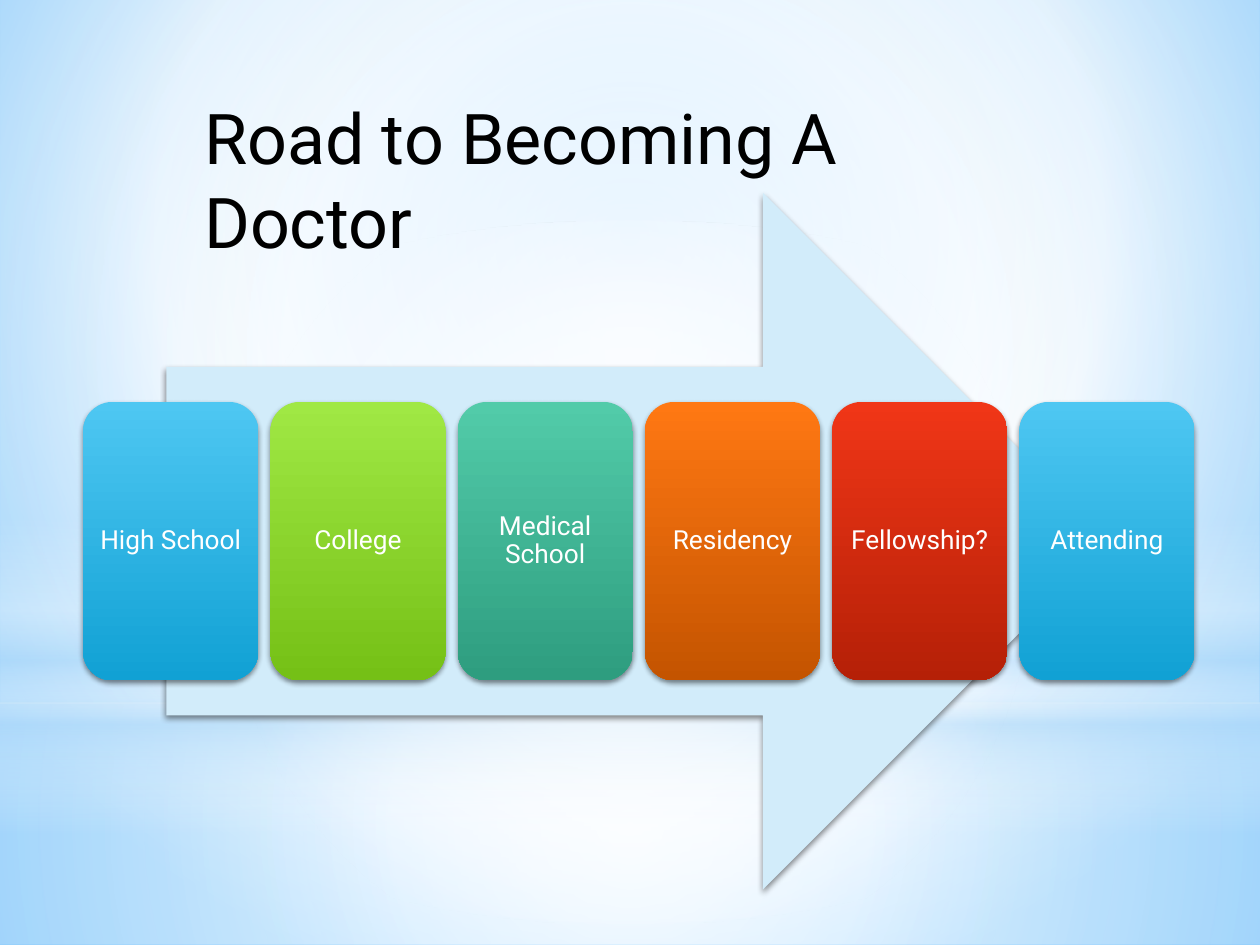
from dataclasses import dataclass

from pptx import Presentation
from pptx.dml.color import RGBColor
from pptx.enum.shapes import MSO_SHAPE
from pptx.enum.text import MSO_ANCHOR, MSO_AUTO_SIZE, PP_ALIGN
from pptx.oxml import parse_xml
from pptx.oxml.ns import nsdecls, qn
from pptx.util import Inches, Pt

RECT, OVAL = MSO_SHAPE.RECTANGLE, MSO_SHAPE.OVAL
ARROW, CARD = MSO_SHAPE.RIGHT_ARROW, MSO_SHAPE.ROUNDED_RECTANGLE


@dataclass(frozen=True)
class Theme:
    font: str = "Roboto"
    title_size: int = 40
    card_size: int = 15
    ink: str = "000000"
    white: str = "FFFFFF"
    mist: str = "B4DCFA"
    sky: str = "9ED5FF"
    edge: str = "5BB9FF"
    arrow: str = "D2ECFA"
    blue: tuple = ("4EC7F2", "11A1D4")
    lime: tuple = ("A0E844", "75C016")
    teal: tuple = ("52CBA9", "2E9D7F")
    orange: tuple = ("FF7813", "C45400")
    red: tuple = ("F03617", "B52007")


theme = Theme()
CENTER = (50, 50, 50, 50)


def set_grad(owner, fill, stops, focus=None):
    """Fill with (position, colour, opacity) stops: round a focus, else downward."""
    fill.gradient()
    old = owner.find(".//" + qn("a:gradFill"))
    marks = "".join(
        f'<a:gs pos="{pos * 1000}"><a:srgbClr val="{color}">'
        f'<a:alpha val="{alpha * 1000}"/></a:srgbClr></a:gs>'
        for pos, color, alpha in stops)
    if focus:
        sides = " ".join(f'{side}="{val * 1000}"' for side, val in zip("ltrb", focus))
        way = f'<a:path path="circle"><a:fillToRect {sides}/></a:path>'
    else:
        way = '<a:lin ang="5400000" scaled="0"/>'
    old.getparent().replace(old, parse_xml(
        f'<a:gradFill {nsdecls("a")} rotWithShape="1">'
        f'<a:gsLst>{marks}</a:gsLst>{way}</a:gradFill>'))


def add_shape(kind, left, top, width, height, shadow=False):
    shape = slide.shapes.add_shape(
        kind, Inches(left), Inches(top), Inches(width), Inches(height))
    shape.line.fill.background()
    shape.shadow.inherit = False
    if shadow:
        shape.element.spPr.find(qn("a:effectLst")).append(parse_xml(
            f'<a:outerShdw {nsdecls("a")} blurRad="{Pt(3.1)}" dist="{Pt(1.8)}" '
            'dir="5400000" rotWithShape="0"><a:srgbClr val="000000">'
            '<a:alpha val="45000"/></a:srgbClr></a:outerShdw>'))
    return shape


deck = Presentation()
deck.slide_width, deck.slide_height = Inches(10), Inches(7.5)
slide = deck.slides.add_slide(deck.slide_layouts[5])

# Background glow
white, mist = theme.white, theme.mist
set_grad(slide.element, slide.background.fill,
         [(0, theme.sky, 100), (60, white, 100), (100, theme.edge, 100)],
         (20, 10, 20, 60))
glows = [
    (RECT, 5.58, 1.92, [(0, white, 91), (37, white, 76), (100, mist, 79)], CENTER),
    (RECT, 0, 5.58, [(0, white, 89), (48, white, 62), (100, mist, 79)], CENTER),
    (RECT, 4.12, 2.5, [(0, white, 0), (29, white, 30), (45, mist, 40),
                       (55, white, 26), (65, mist, 60), (100, white, 0)], None),
    (OVAL, 1.75, 5.58, [(0, white, 100), (56, white, 0)], CENTER),
]
for kind, top, height, stops, focus in glows:
    glow = add_shape(kind, 0, top, 10, height)
    set_grad(glow.element, glow.fill, stops, focus)

# Title, raised above the glow
title = slide.shapes.title
slide.shapes.element.append(title.element)
title.left, title.top = Inches(1.52), Inches(0.7)
title.width, title.height = Inches(6.98), Inches(0.77)
frame = title.text_frame
frame.text = "Road to Becoming A Doctor"
frame.word_wrap = True
frame.auto_size = MSO_AUTO_SIZE.NONE
frame.vertical_anchor = MSO_ANCHOR.TOP
para = frame.paragraphs[0]
para.alignment = PP_ALIGN.LEFT
para.font.name, para.font.size = theme.font, Pt(theme.title_size)
para.font.color.rgb = RGBColor.from_string(theme.ink)

# Arrow and career steps
arrow = add_shape(ARROW, 1.32, 1.53, 7.5, 5.53, shadow=True)
arrow.fill.solid()
arrow.fill.fore_color.rgb = RGBColor.from_string(theme.arrow)

steps = [
    ("High School", theme.blue),
    ("College", theme.lime),
    ("Medical School", theme.teal),
    ("Residency", theme.orange),
    ("Fellowship?", theme.red),
    ("Attending", theme.blue),
]
first, last = 0.66, 8.09
pitch = (last - first) / (len(steps) - 1)
for i, (label, (light, dark)) in enumerate(steps):
    card = add_shape(CARD, first + i * pitch, 3.19, 1.39, 2.21, shadow=True)
    set_grad(card.element, card.fill, [(0, light, 100), (100, dark, 100)])
    frame = card.text_frame
    frame.text = label
    frame.word_wrap = True
    frame.vertical_anchor = MSO_ANCHOR.MIDDLE
    frame.margin_left = frame.margin_right = Inches(0.06)
    frame.margin_top = frame.margin_bottom = Inches(0.06)
    para = frame.paragraphs[0]
    para.alignment = PP_ALIGN.CENTER
    para.line_spacing = 0.9
    para.font.name, para.font.size = theme.font, Pt(theme.card_size)
    para.font.color.rgb = RGBColor.from_string(theme.white)

deck.save("out.pptx")
